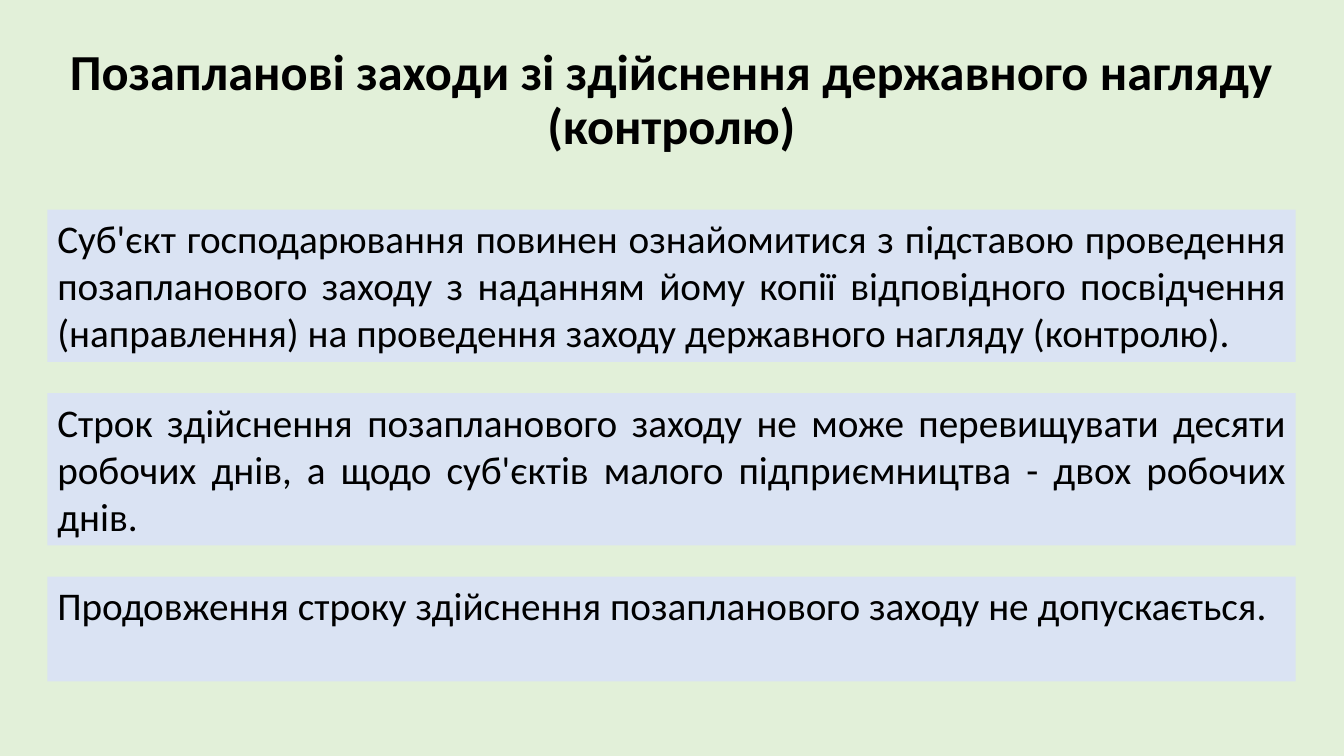
from pptx import Presentation
from pptx.dml.color import RGBColor
from pptx.enum.shapes import MSO_SHAPE
from pptx.enum.text import MSO_ANCHOR, MSO_AUTO_SIZE, PP_ALIGN
from pptx.util import Inches, Pt

BACKGROUND = RGBColor(0xE2, 0xF0, 0xD9)
PANEL = RGBColor(0xDA, 0xE3, 0xF3)
BLACK = RGBColor(0x00, 0x00, 0x00)

TITLE = "Позапланові заходи зі здійснення державного нагляду (контролю)"
RULES = [
    ("Суб'єкт господарювання повинен ознайомитися з підставою проведення "
     "позапланового заходу з наданням йому копії відповідного посвідчення "
     "(направлення) на проведення заходу державного нагляду (контролю).",
     1.51, PP_ALIGN.JUSTIFY),
    ("Строк здійснення позапланового заходу не може перевищувати десяти "
     "робочих днів, а щодо суб'єктів малого підприємництва - двох робочих днів.",
     1.51, PP_ALIGN.JUSTIFY),
    ("Продовження строку здійснення позапланового заходу не допускається.",
     1.04, PP_ALIGN.LEFT),
]
PANEL_GAP = 0.31


def place(shape, left, top, width, height):
    shape.left, shape.top = Inches(left), Inches(top)
    shape.width, shape.height = Inches(width), Inches(height)


def write_text(shape, text, size, align, anchor, bold=False):
    frame = shape.text_frame
    frame.text = text
    frame.word_wrap = True
    frame.auto_size = MSO_AUTO_SIZE.NONE
    frame.vertical_anchor = anchor
    para = frame.paragraphs[0]
    para.alignment = align
    para.font.name = "Calibri"
    para.font.size = Pt(size)
    para.font.bold = bold
    para.font.color.rgb = BLACK
    return para


def add_title(page, left, top, width, height):
    title = page.shapes.title
    place(title, left, top, width, height)
    para = write_text(title, TITLE, 36, PP_ALIGN.CENTER, MSO_ANCHOR.MIDDLE, True)
    para.line_spacing = 0.9


def add_rules(page, left, top, width):
    for text, height, align in RULES:
        panel = page.shapes.add_shape(
            MSO_SHAPE.RECTANGLE, Inches(left), Inches(top), Inches(width), Inches(height))
        panel.shadow.inherit = False
        panel.fill.solid()
        panel.fill.fore_color.rgb = PANEL
        panel.line.fill.background()
        write_text(panel, text, 28, align, MSO_ANCHOR.TOP)
        top += height + PANEL_GAP


def main():
    deck = Presentation()
    deck.slide_width, deck.slide_height = Inches(13.33), Inches(7.5)
    page = deck.slides.add_slide(deck.slide_layouts.get_by_name("Title Only"))
    page.background.fill.solid()
    page.background.fill.fore_color.rgb = BACKGROUND
    add_title(page, 0.36, 0.49, 12.6, 1.03)
    add_rules(page, 0.47, 2.08, 12.38)
    deck.save("out.pptx")


if __name__ == "__main__":
    main()
